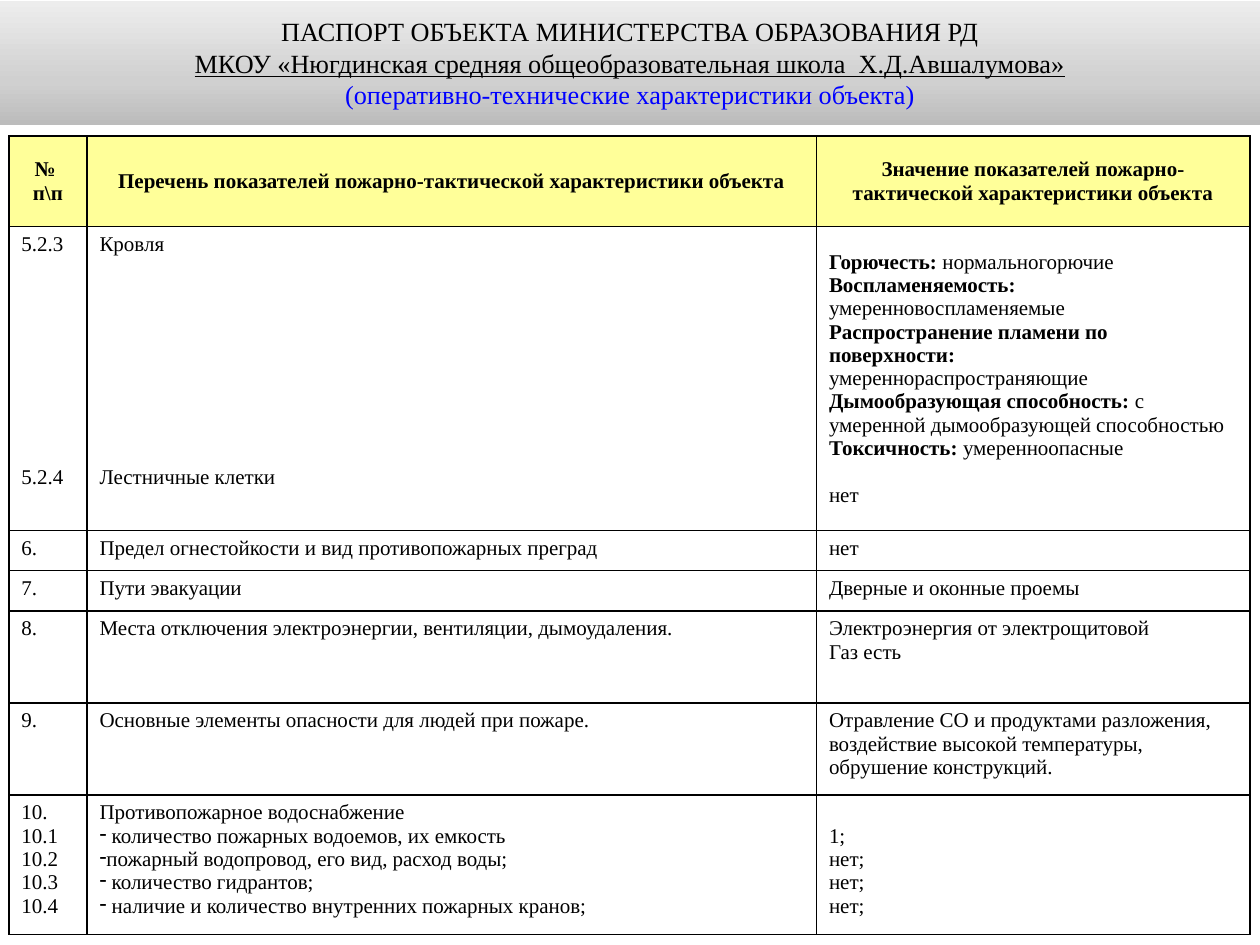
from copy import deepcopy
from dataclasses import dataclass

from lxml.etree import SubElement
from pptx import Presentation
from pptx.dml.color import RGBColor
from pptx.enum.shapes import MSO_SHAPE as Shape
from pptx.enum.text import MSO_ANCHOR as Anchor, PP_ALIGN as Align
from pptx.oxml.ns import qn
from pptx.util import Inches, Pt

FONT = "Times New Roman"
BLACK = RGBColor(0x00, 0x00, 0x00)
BLUE = RGBColor(0x00, 0x00, 0xFF)
WHITE = RGBColor(0xFF, 0xFF, 0xFF)
YELLOW = RGBColor(0xFF, 0xFF, 0x99)
BANNER_STOPS = [
    (0, RGBColor(0xBC, 0xBC, 0xBC)),
    (0.35, RGBColor(0xD0, 0xD0, 0xD0)),
    (1, RGBColor(0xED, 0xED, 0xED)),
]
LINE_HEIGHT = 13.3


@dataclass
class Line:
    text: str = ""
    bold: str = ""
    skipped: int = 0
    bullet: str = ""


TITLE = [
    ("ПАСПОРТ ОБЪЕКТА МИНИСТЕРСТВА ОБРАЗОВАНИЯ РД", BLACK, False),
    ("МКОУ «Нюгдинская средняя общеобразовательная школа  Х.Д.Авшалумова»", BLACK, True),
    ("(оперативно-технические характеристики объекта)", BLUE, False),
]
COLUMN_WIDTHS = [0.62, 5.79, 3.44]
ROW_HEIGHTS = [0.72, 2.41, 0.32, 0.32, 0.73, 0.73, 1.11]
HEADER = [
    [Line(bold="№ "), Line(bold="п\\п")],
    [Line(bold="Перечень показателей пожарно-тактической характеристики объекта")],
    [Line(bold="Значение показателей пожарно-тактической характеристики объекта")],
]
ROOF = [
    [Line("5.2.3"), Line("5.2.4", skipped=9)],
    [Line("Кровля"), Line("Лестничные клетки", skipped=9)],
    [
        Line("нормальногорючие", "Горючесть: "),
        Line("умеренновоспламеняемые", "Воспламеняемость: "),
        Line(bold="Распространение пламени по поверхности:"),
        Line("умереннораспространяющие"),
        Line("с умеренной дымообразующей способностью", "Дымообразующая способность: "),
        Line("умеренноопасные", "Токсичность: "),
        Line("нет", skipped=1),
    ],
]
SAFETY = [
    [[Line("6.")], [Line("Предел огнестойкости и вид противопожарных преград")], [Line("нет")]],
    [[Line("7.")], [Line("Пути эвакуации")], [Line("Дверные и оконные проемы")]],
    [
        [Line("8.")],
        [Line("Места отключения электроэнергии, вентиляции, дымоудаления.")],
        [Line("Электроэнергия от электрощитовой"), Line("Газ есть")],
    ],
    [
        [Line("9.")],
        [Line("Основные элементы опасности для людей при пожаре.")],
        [Line("Отравление СО и продуктами разложения, воздействие высокой температуры, "
              "обрушение конструкций.")],
    ],
]
WATER = [
    [Line(number) for number in ("10.", "10.1", "10.2", "10.3", "10.4")],
    [
        Line("Противопожарное водоснабжение"),
        Line(" количество пожарных водоемов, их емкость", bullet="-"),
        Line("пожарный водопровод, его вид, расход воды;", bullet="-"),
        Line(" количество гидрантов;", bullet="-"),
        Line(" наличие и количество внутренних пожарных кранов;", bullet="-"),
    ],
    [Line(value) for value in ("1;", "нет;", "нет;", "нет;")],
]
ROWS = [HEADER, ROOF, *SAFETY, WATER]


def add_span(para, text, size, color=BLACK, bold=False, underline=False):
    span = para.add_run()
    span.text = text
    span.font.name = FONT
    span.font.size = Pt(size)
    span.font.color.rgb = color
    span.font.bold = bold
    span.font.underline = underline


def next_paragraph(frame, index):
    return frame.add_paragraph() if index else frame.paragraphs[0]


def add_bullet(para, mark):
    properties = para._p.get_or_add_pPr()
    properties.set("marL", "0")
    properties.set("indent", "0")
    SubElement(properties, qn("a:buChar"), char=mark)


def add_borders(cell):
    properties = cell._tc.get_or_add_tcPr()
    for side in ("a:lnL", "a:lnR", "a:lnT", "a:lnB"):
        border = SubElement(properties, qn(side), w=str(Pt(1)))
        fill = SubElement(border, qn("a:solidFill"))
        SubElement(fill, qn("a:srgbClr"), val=str(BLACK))


def fill_cell(cell, lines, color, align):
    add_borders(cell)
    cell.fill.solid()
    cell.fill.fore_color.rgb = color
    cell.margin_left = cell.margin_right = Inches(0.1)
    cell.margin_top = cell.margin_bottom = Inches(0.05)
    for index, line in enumerate(lines):
        para = next_paragraph(cell.text_frame, index)
        para.alignment = align
        if line.skipped:
            para.space_before = Pt(line.skipped * LINE_HEIGHT)
        if line.bullet:
            add_bullet(para, line.bullet)
        if line.bold:
            add_span(para, line.bold, 12, bold=True)
        if line.text:
            add_span(para, line.text, 12)


def add_passport_table(page, left, top, width, height):
    table = page.shapes.add_table(
        len(ROWS), len(COLUMN_WIDTHS), left, top, width, height
    ).table
    table.first_row = table.horz_banding = False
    for column, column_width in zip(table.columns, COLUMN_WIDTHS):
        column.width = Inches(column_width)
    for row, row_height in zip(table.rows, ROW_HEIGHTS):
        row.height = Inches(row_height)
    for row_index, row in enumerate(ROWS):
        color, align = (WHITE, Align.LEFT) if row_index else (YELLOW, Align.CENTER)
        for column_index, lines in enumerate(row):
            cell = table.cell(row_index, column_index)
            fill_cell(cell, lines, color, align)
            if row is HEADER or lines is ROOF[2]:
                cell.vertical_anchor = Anchor.MIDDLE
            if lines is WATER[2]:
                cell.margin_top = Inches(0.05) + Pt(LINE_HEIGHT)


def add_title_banner(page, left, top, width, height):
    banner = page.shapes.add_shape(Shape.RECTANGLE, left, top, width, height)
    banner.shadow.inherit = False
    banner.line.fill.background()
    banner.fill.gradient()
    banner.fill.gradient_angle = 90
    stop_list = banner._element.spPr.find(".//" + qn("a:gsLst"))
    stop_list.insert(1, deepcopy(stop_list[0]))
    for stop, (position, color) in zip(banner.fill.gradient_stops, BANNER_STOPS):
        stop.position = position
        stop.color.rgb = color
    frame = banner.text_frame
    frame.word_wrap = True
    frame.vertical_anchor = Anchor.MIDDLE
    frame.margin_left = frame.margin_right = Inches(0.09)
    frame.margin_top = frame.margin_bottom = Inches(0.05)
    for index, (text, color, underline) in enumerate(TITLE):
        para = next_paragraph(frame, index)
        para.alignment = Align.CENTER
        add_span(para, text, 15, color, underline=underline)


def main():
    deck = Presentation()
    deck.slide_width = Inches(10)
    deck.slide_height = Inches(7.5)
    page = deck.slides.add_slide(deck.slide_layouts[6])
    add_passport_table(page, Inches(0.07), Inches(1.08), Inches(9.85), Inches(6.35))
    add_title_banner(page, Inches(0), Inches(0.01), Inches(10), Inches(0.98))
    deck.save("out.pptx")


if __name__ == "__main__":
    main()
